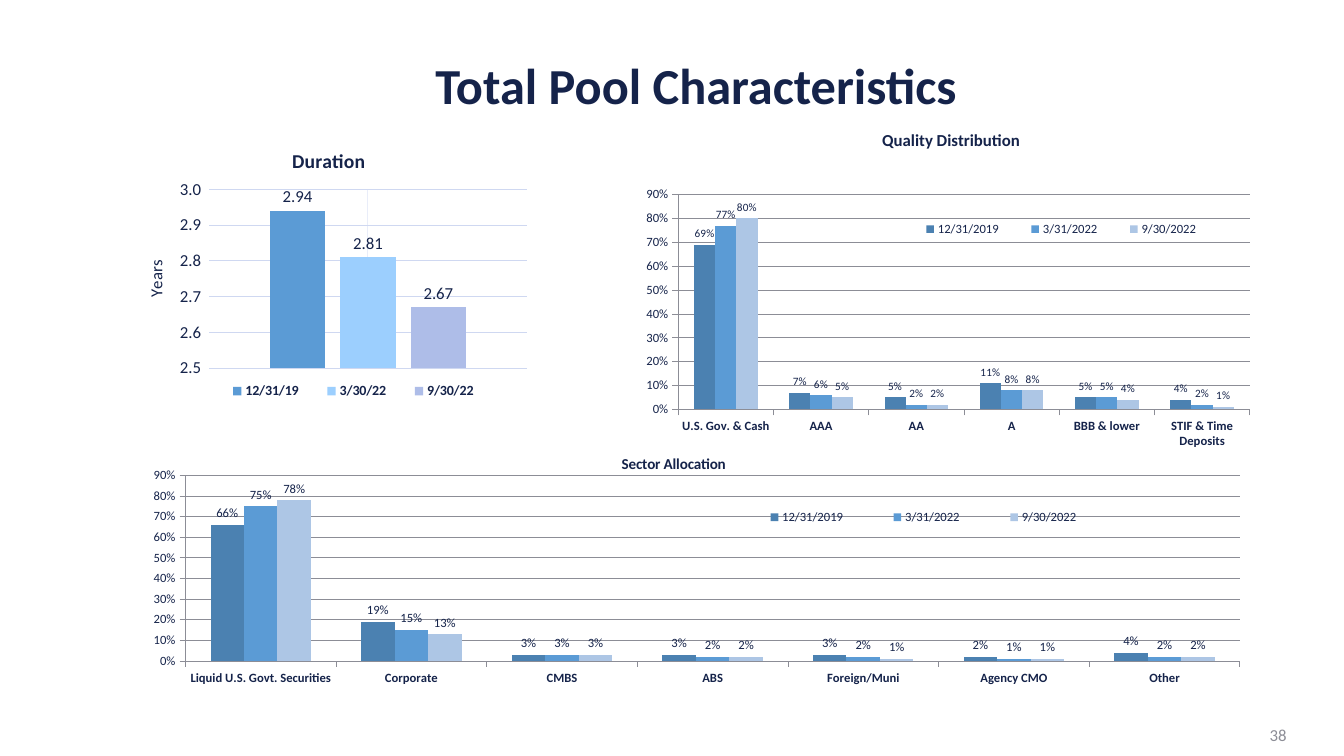
from lxml import etree
from pptx import Presentation
from pptx.chart.data import CategoryChartData
from pptx.dml.color import RGBColor
from pptx.enum.chart import XL_CHART_TYPE, XL_LABEL_POSITION, XL_LEGEND_POSITION, XL_TICK_MARK
from pptx.enum.text import MSO_ANCHOR, PP_ALIGN
from pptx.oxml.ns import qn
from pptx.util import Inches, Pt

COLORS = {"navy": "15234A", "gray": "8C8D96", "pale": "CFD8F1", "faint": "E9EDF9",
          "steel": "4B81B1", "blue": "5B9BD5", "mist": "ADC6E5",
          "sky": "9CCFFE", "lilac": "AEBDE8"}


def style_font(font, size, color="navy", bold=False):
    font.name = "Calibri"
    font.size = Pt(size)
    font.bold = bold
    font.color.rgb = RGBColor.from_string(COLORS[color])


def place(parent, index, fractions, target=None):
    """Give a chart part a manual layout in fractions of the chart (x, y[, w, h])."""
    for old in parent.findall(qn("c:layout")):
        parent.remove(old)
    layout = etree.Element(qn("c:layout"))
    manual = etree.SubElement(layout, qn("c:manualLayout"))
    if target:
        etree.SubElement(manual, qn("c:layoutTarget")).set("val", target)
    for side in ("xMode", "yMode"):
        etree.SubElement(manual, qn(f"c:{side}")).set("val", "edge")
    for side, fraction in zip("xywh", fractions):
        etree.SubElement(manual, qn(f"c:{side}")).set("val", str(fraction))
    parent.insert(index, layout)


deck = Presentation()
deck.slide_width, deck.slide_height = Inches(13.33), Inches(7.5)
page = deck.slides.add_slide(deck.slide_layouts[5])

title = page.shapes.title
title.left, title.top, title.width, title.height = (Inches(n) for n in (2.08, 0.73, 9.65, 0.29))
title.text_frame.text = "Total Pool Characteristics"
title.text_frame.vertical_anchor = MSO_ANCHOR.MIDDLE
heading = title.text_frame.paragraphs[0]
heading.alignment = PP_ALIGN.CENTER
heading.line_spacing = 0.9
style_font(heading.runs[0].font, 36, bold=True)

percent_dates = ("12/31/2019", "3/31/2022", "9/30/2022")
percent_style = {
    "range": (0, 0.9, 0.1), "axis_format": "0%", "label_format": "0%",
    "axis_size": 9, "legend_size": 9, "grid": ("gray", 0.5),
    "gap": 150, "overlap": 0, "colors": ("steel", "blue", "mist")}
charts = [
    percent_style | {
        "title": "Sector Allocation", "title_size": 10.8, "label_size": 9,
        "at": (0.91, 4.33, 11.62, 2.97), "title_at": (0.45, 0.05),
        "plot_at": (0.08, 0.13, 0.9, 0.62), "legend_at": (0.54, 0.24, 0.34, 0.06),
        "categories": ("Liquid U.S. Govt. Securities", "Corporate", "CMBS", "ABS",
                       "Foreign/Muni", "Agency CMO", "Other"),
        "series": dict(zip(percent_dates, (
            (0.66, 0.19, 0.03, 0.03, 0.03, 0.02, 0.04),
            (0.75, 0.15, 0.03, 0.02, 0.02, 0.01, 0.02),
            (0.78, 0.13, 0.03, 0.02, 0.01, 0.01, 0.02))))},
    percent_style | {
        "title": "Quality Distribution", "title_size": 12, "label_size": 8,
        "at": (6.29, 1.07, 6.23, 3.44), "title_at": (0.39, 0.05),
        "plot_at": (0.07, 0.25, 0.91, 0.62), "legend_at": (0.42, 0.32, 0.52, 0.06),
        "categories": ("U.S. Gov. & Cash", "AAA", "AA", "A", "BBB & lower",
                       "STIF & Time Deposits"),
        "series": dict(zip(percent_dates, (
            (0.69, 0.07, 0.05, 0.11, 0.05, 0.04),
            (0.77, 0.06, 0.02, 0.08, 0.05, 0.02),
            (0.8, 0.05, 0.02, 0.08, 0.04, 0.01))))},
    {"title": "Duration", "title_size": 14, "label_size": 12,
     "at": (1.16, 1.25, 4.15, 2.86), "title_at": (0.41, 0.06),
     "plot_at": (0.22, 0.22, 0.76, 0.62), "legend_at": (0.22, 0.88, 0.69, 0.08),
     "range": (2.5, 3, 0.1), "axis_format": "0.0_)", "label_format": "0.00",
     "axis_size": 12, "legend_size": 10, "grid": ("pale", 0.75),
     "gap": 219, "overlap": -27, "colors": ("blue", "sky", "lilac"),
     "categories": ("1",), "value_title": "Years",
     "series": {"12/31/19": (2.94,), "3/30/22": (2.81,), "9/30/22": (2.67,)}},
]

for item in charts:
    is_duration = "value_title" in item
    data = CategoryChartData()
    data.categories = item["categories"]
    for name, values in item["series"].items():
        data.add_series(name, values)
    chart = page.shapes.add_chart(XL_CHART_TYPE.COLUMN_CLUSTERED,
                                  *(Inches(n) for n in item["at"]), data).chart
    style_font(chart.font, item["legend_size"])

    chart.has_title = True
    chart.chart_title.text_frame.text = item["title"]
    style_font(chart.chart_title.text_frame.paragraphs[0].runs[0].font,
               item["title_size"], bold=True)
    place(chart.chart_title._element, 1, item["title_at"])

    chart.has_legend = True
    chart.legend.position = XL_LEGEND_POSITION.BOTTOM
    chart.legend.include_in_layout = False
    style_font(chart.legend.font, item["legend_size"], bold=is_duration)
    place(chart.legend._element, 1, item["legend_at"])
    place(chart._chartSpace.find(".//" + qn("c:plotArea")), 0, item["plot_at"], "inner")

    category_axis, value_axis = chart.category_axis, chart.value_axis
    value_axis.minimum_scale, value_axis.maximum_scale, value_axis.major_unit = item["range"]
    value_axis.tick_labels.number_format = item["axis_format"]
    value_axis.tick_labels.number_format_is_linked = False
    style_font(value_axis.tick_labels.font, item["axis_size"])
    grid_color, grid_width = item["grid"]
    lines = [(value_axis.major_gridlines, grid_color, grid_width)]
    if is_duration:
        category_axis.visible = False
        category_axis.has_minor_gridlines = True
        gridlines = category_axis._element.find(qn("c:minorGridlines"))
        outline = etree.SubElement(etree.SubElement(gridlines, qn("c:spPr")), qn("a:ln"))
        outline.set("w", str(Pt(0.75)))
        fill = etree.SubElement(outline, qn("a:solidFill"))
        etree.SubElement(fill, qn("a:srgbClr")).set("val", COLORS["faint"])
        value_axis.major_tick_mark = XL_TICK_MARK.NONE
        value_axis.format.line.fill.background()
        value_axis.axis_title.text_frame.text = item["value_title"]
        style_font(value_axis.axis_title.text_frame.paragraphs[0].runs[0].font, 12)
    else:
        style_font(category_axis.tick_labels.font, 9, bold=True)
        for axis in (category_axis, value_axis):
            axis.major_tick_mark = XL_TICK_MARK.OUTSIDE
            lines.append((axis, "gray", 0.5))
    for part, color, width in lines:
        part.format.line.color.rgb = RGBColor.from_string(COLORS[color])
        part.format.line.width = Pt(width)

    plot = chart.plots[0]
    plot.vary_by_categories = False
    plot.gap_width, plot.overlap = item["gap"], item["overlap"]
    for series, color in zip(plot.series, item["colors"]):
        series.format.fill.solid()
        series.format.fill.fore_color.rgb = RGBColor.from_string(COLORS[color])
        labels = series.data_labels
        labels.show_value = True
        labels.position = XL_LABEL_POSITION.OUTSIDE_END
        labels.number_format = item["label_format"]
        labels.number_format_is_linked = False
        style_font(labels.font, item["label_size"])

number_box = page.shapes.add_textbox(Inches(9.86), Inches(7.09), Inches(3), Inches(0.4))
number_box.text_frame.word_wrap = True
number_box.text_frame.vertical_anchor = MSO_ANCHOR.MIDDLE
number_box.text_frame.text = "38"
para = number_box.text_frame.paragraphs[0]
para.alignment = PP_ALIGN.RIGHT
style_font(para.runs[0].font, 12, "gray")

deck.save("out.pptx")
